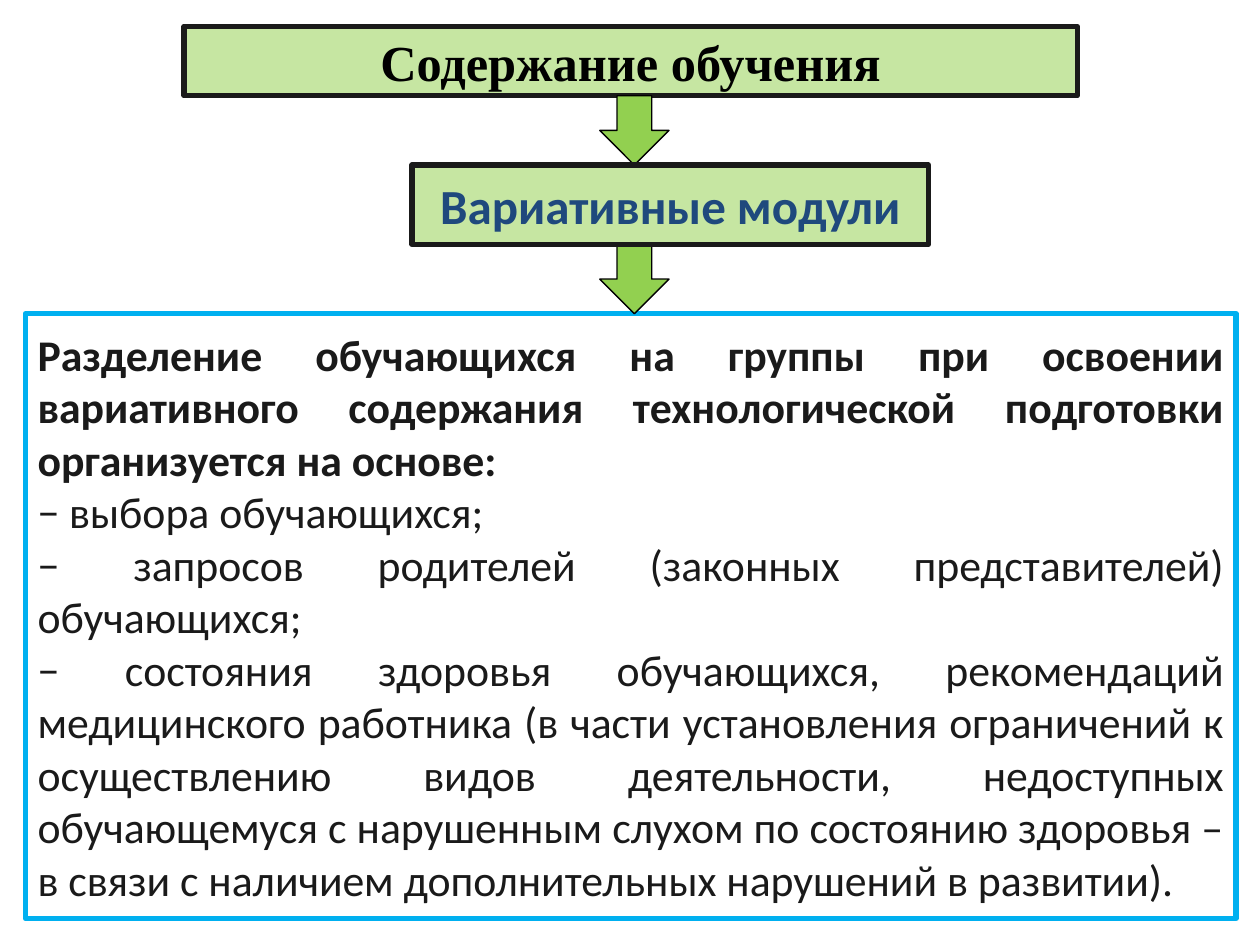
import pptx
import pptx.util
import pptx.dml.color
import pptx.enum.shapes
import pptx.enum.text

Inches = pptx.util.Inches
Pt = pptx.util.Pt
RGBColor = pptx.dml.color.RGBColor
SHAPE = pptx.enum.shapes.MSO_SHAPE
ALIGN = pptx.enum.text.PP_ALIGN

PALE_GREEN = RGBColor(0xC6, 0xE6, 0xA2)
GREEN = RGBColor(0x92, 0xD0, 0x50)
SKY = RGBColor(0x00, 0xB0, 0xF0)
NAVY = RGBColor(0x1F, 0x49, 0x7D)
INK = RGBColor(0x1A, 0x1A, 0x1A)
BLACK = RGBColor(0, 0, 0)

deck = pptx.Presentation()
deck.slide_width, deck.slide_height = Inches(10), Inches(7.5)
slide = deck.slides.add_slide(deck.slide_layouts[6])


def add_block(kind, box, fill, line, line_width):
    block = slide.shapes.add_shape(kind, *[Inches(v) for v in box])
    block.shadow.inherit = False
    if fill is None:
        block.fill.background()
    else:
        block.fill.solid()
        block.fill.fore_color.rgb = fill
    block.line.color.rgb = line
    block.line.width = Pt(line_width)
    return block


def write(block, lines, align, color, **font_format):
    frame = block.text_frame
    frame.word_wrap = True
    frame.vertical_anchor = pptx.enum.text.MSO_ANCHOR.MIDDLE
    for i, (text, bold) in enumerate(lines):
        paragraph = frame.paragraphs[0] if i == 0 else frame.add_paragraph()
        paragraph.alignment = align
        run = paragraph.add_run()
        run.text = text
        run.font.color.rgb = color
        for name, value in {**font_format, "bold": bold}.items():
            setattr(run.font, name, value)


# Grounds for dividing students into groups
grounds = add_block(SHAPE.RECTANGLE, (0.2, 2.49, 9.61, 4.8), None, SKY, 3)
write(grounds, [
    ("Разделение обучающихся на группы при освоении вариативного содержания "
     "технологической подготовки организуется на основе:", True),
    ("− выбора обучающихся;", False),
    ("− запросов родителей (законных представителей) обучающихся;", False),
    ("− состояния здоровья обучающихся, рекомендаций медицинского работника "
     "(в части установления ограничений к осуществлению видов деятельности, "
     "недоступных обучающемуся с нарушенным слухом по состоянию здоровья – "
     "в связи с наличием дополнительных нарушений в развитии).", False),
], ALIGN.JUSTIFY, INK, name="Calibri", size=Pt(25))

# Title
title = add_block(SHAPE.RECTANGLE, (1.46, 0.21, 7.09, 0.55), PALE_GREEN, INK, 3)
write(title, [("Содержание обучения", True)], ALIGN.CENTER, BLACK,
      name="Times New Roman", size=Pt(28.8))

# Arrows between the levels
for arrow_top in (1.94, 0.76):
    add_block(SHAPE.DOWN_ARROW, (4.76, arrow_top, 0.55, 0.55), GREEN, BLACK, 0.75)

# Variable modules
modules = add_block(SHAPE.RECTANGLE, (3.27, 1.31, 4.1, 0.63), PALE_GREEN, INK, 3)
write(modules, [("Вариативные модули", True)], ALIGN.CENTER, NAVY,
      name="Calibri", size=Pt(28))

deck.save("out.pptx")
